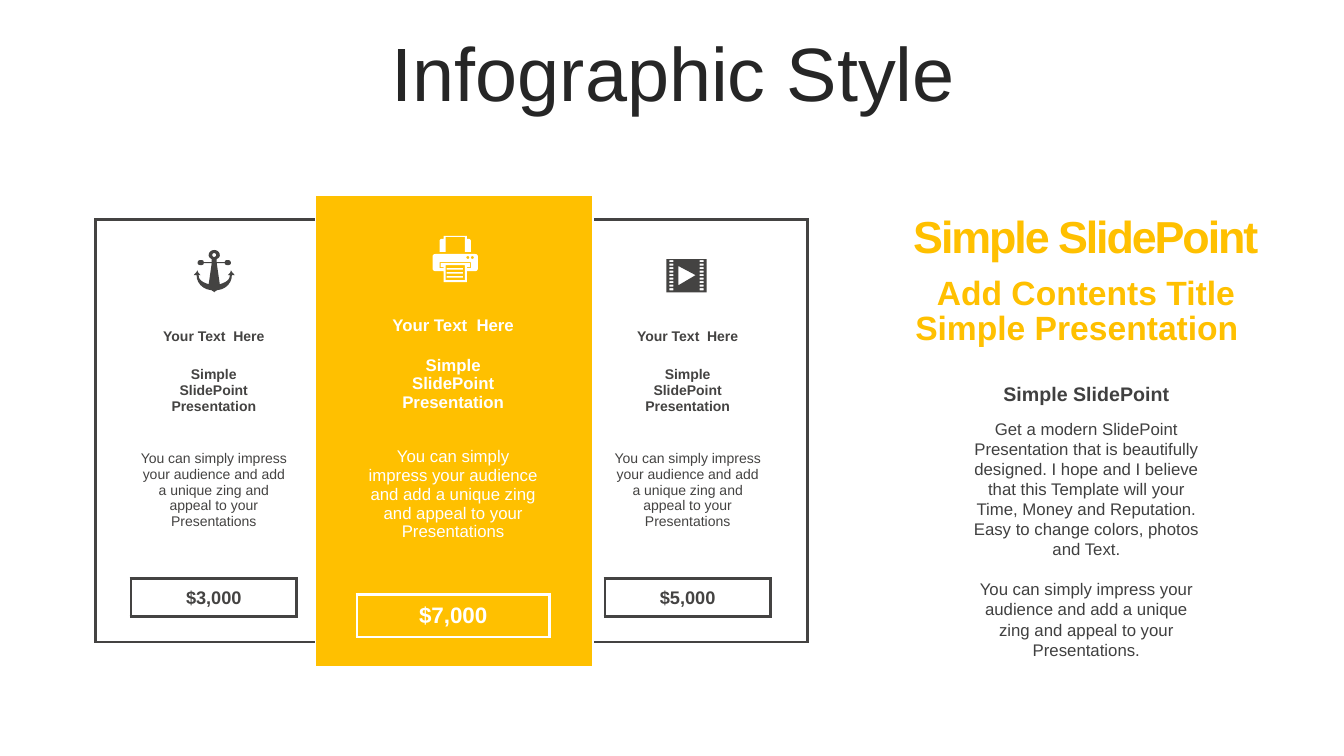
from dataclasses import dataclass
from math import cos, pi, sin

from lxml.etree import SubElement
from pptx import Presentation
from pptx.dml.color import RGBColor as Rgb
from pptx.enum.text import MSO_ANCHOR as Anchor, PP_ALIGN as Align
from pptx.oxml import parse_xml
from pptx.oxml.ns import nsdecls, qn
from pptx.util import Inches, Pt


@dataclass(frozen=True)
class Theme:
    font: str = "Arial"
    title: str = "262626"
    dark: str = "444342"
    body: str = "404040"
    gold: str = "FFC000"
    white: str = "FFFFFF"
    title_size: int = 54
    headline_size: int = 32
    subtitle_size: int = 24
    lead_size: int = 14
    body_size: int = 12


@dataclass(frozen=True)
class Plan:
    price: str
    left: float
    top: float
    columns: tuple
    rows: tuple
    fill: str
    ink: str
    frame: float
    text_size: int
    price_size: int
    side_margin: float
    edge_margin: float


THEME = Theme()
PRICE_ROW = 5
PRICE_LINE = 2.25
PITCH = "You can simply impress your audience and add a unique zing and appeal to your Presentations"
SIDE = dict(top=2.18, columns=(0.35, 1.64, 0.37),
            rows=(1, 0.33, 0.73, 1.25, 0.25, 0.38, 0.25),
            fill=THEME.white, ink=THEME.dark, frame=2.25, text_size=10,
            price_size=13, side_margin=0.08, edge_margin=0.04)
PLANS = (
    Plan("$5,000", left=5.65, **SIDE),
    Plan("$3,000", left=0.95, **SIDE),
    Plan("$7,000", left=3.13, top=1.94, columns=(0.41, 1.91, 0.43),
         rows=(1.11, 0.36, 0.8, 1.39, 0.3, 0.42, 0.3),
         fill=THEME.gold, ink=THEME.white, frame=1.5, text_size=12,
         price_size=16, side_margin=0.1, edge_margin=0.05),
)


def rectangle(left, top, right, bottom):
    return [(left, top), (right, top), (right, bottom), (left, bottom)]


def circle(x, y, radius):
    angles = [step * pi / 6 for step in range(12)]
    return [(x + radius * cos(angle), y + radius * sin(angle)) for angle in angles]


def flatten(steps):
    points = []
    for step in steps:
        if len(step) == 2:
            points.append(step)
            continue
        corners = [points[-1], step[:2], step[2:4], step[4:]]
        for part in range(1, 7):
            t = part / 6
            weights = ((1 - t) ** 3, 3 * t * (1 - t) ** 2, 3 * t * t * (1 - t), t ** 3)
            points.append(tuple(sum(w * corner[axis] for w, corner in zip(weights, corners))
                                for axis in (0, 1)))
    return points


def symmetric(center, steps):
    half = flatten(steps)
    return half + [(2 * center - x, y) for x, y in reversed(half)]


def film_icon():
    holes = [rectangle(left, 2.58 + row * 0.035, left + 0.04, 2.6 + row * 0.035)
             for row in range(9) for left in (6.64, 6.94)]
    return [rectangle(6.61, 2.57, 7.01, 2.9),
            [(6.73, 2.64), (6.73, 2.83), (6.9, 2.73)]] + holes


def anchor_icon():
    center = 2.125
    outline = symmetric(center, [
        (center, 2.48), (2.15, 2.48, 2.18, 2.5, 2.18, 2.53),
        (2.18, 2.55, 2.17, 2.56, 2.15, 2.57), (2.15, 2.6), (2.23, 2.6),
        (2.23, 2.59), (2.24, 2.58, 2.25, 2.58, 2.26, 2.58),
        (2.28, 2.58, 2.29, 2.59, 2.29, 2.61), (2.29, 2.62, 2.28, 2.63, 2.26, 2.63),
        (2.25, 2.63, 2.24, 2.63, 2.23, 2.62), (2.23, 2.61), (2.15, 2.61),
        (2.18, 2.82), (2.24, 2.8, 2.28, 2.78, 2.28, 2.73), (2.26, 2.73),
        (2.28, 2.71, 2.29, 2.7, 2.29, 2.68), (2.3, 2.7, 2.31, 2.71, 2.33, 2.73),
        (2.3, 2.73), (2.3, 2.8, 2.25, 2.87, 2.15, 2.88),
        (2.14, 2.89, 2.13, 2.89, center, 2.9)])
    return [outline, circle(center, 2.53, 0.02)]


def printer_icon():
    center = 4.515
    halves = (
        [(4.71, 2.52), (4.73, 2.52, 4.74, 2.53, 4.74, 2.55), (4.74, 2.66),
         (4.74, 2.68, 4.73, 2.69, 4.71, 2.69), (4.63, 2.69), (4.63, 2.8)],
        [(4.63, 2.34), (4.63, 2.37), (4.65, 2.37),
         (4.66, 2.37, 4.67, 2.38, 4.67, 2.39), (4.67, 2.5), (4.61, 2.5), (4.61, 2.35)],
        [(4.67, 2.6), (4.67, 2.66), (4.63, 2.66), (4.63, 2.65), (4.66, 2.65), (4.66, 2.61)],
        [(4.61, 2.63), (4.61, 2.78)],
    )
    lines = [rectangle(4.43, top, 4.59, top + 0.015) for top in (2.66, 2.7, 2.74)]
    buttons = [circle(x, 2.555, 0.015) for x in (4.64, 4.685)]
    return [symmetric(center, half) for half in halves] + lines + buttons


class SlideBuilder:
    def __init__(self, deck, theme):
        self.theme = theme
        self.slide = deck.slides.add_slide(deck.slide_layouts[5])

    def fill_text(self, frame, texts, size, color, bold=False, gap=0):
        for index, text in enumerate(texts):
            para = frame.paragraphs[0] if index == 0 else frame.add_paragraph()
            para.text = text
            para.alignment = Align.CENTER
            para.font.name = self.theme.font
            para.font.size = Pt(size)
            para.font.bold = bold
            para.font.color.rgb = Rgb.from_string(color)
            if index:
                para.space_before = Pt(gap)

    def title(self, text):
        box = self.slide.shapes.title
        box.left, box.top, box.width, box.height = map(Inches, (0.35, 0.37, 12.66, 0.79))
        frame = box.text_frame
        frame.vertical_anchor = Anchor.MIDDLE
        self.fill_text(frame, [text], self.theme.title_size, self.theme.title)
        frame.paragraphs[0].line_spacing = 0.9

    def text(self, place, texts, size, color, bold=False, gap=0, tracking=None):
        box = self.slide.shapes.add_textbox(*map(Inches, place))
        box.text_frame.word_wrap = True
        self.fill_text(box.text_frame, texts, size, color, bold, gap)
        if tracking is not None:
            for span in box.text_frame.paragraphs[0].runs:
                span._r.get_or_add_rPr().set("spc", str(int(tracking * 100)))

    def icon(self, contours, color):
        first, *others = [[(Inches(x), Inches(y)) for x, y in contour] for contour in contours]
        builder = self.slide.shapes.build_freeform(*first[0])
        builder.add_line_segments(first[1:])
        for contour in others:
            builder.move_to(*contour[0])
            builder.add_line_segments(contour[1:])
        shape = builder.convert_to_shape()
        shape.shadow.inherit = False
        shape.fill.solid()
        shape.fill.fore_color.rgb = Rgb.from_string(color)
        shape.line.fill.background()

    def borders(self, cell, color, widths):
        properties = cell._tc.get_or_add_tcPr()
        for index, side in enumerate("LRTB"):
            width = widths.get(side, 0)
            paint = f'<a:solidFill><a:srgbClr val="{color}"/></a:solidFill>' if width else "<a:noFill/>"
            properties.insert(index, parse_xml(
                f'<a:ln{side} {nsdecls("a")} w="{Pt(width)}">{paint}</a:ln{side}>'))

    def plan(self, plan):
        size = (sum(plan.columns), sum(plan.rows))
        table = self.slide.shapes.add_table(
            len(plan.rows), len(plan.columns),
            *map(Inches, (plan.left, plan.top, *size))).table
        table.first_row = table.horz_banding = False
        for column, width in zip(table.columns, plan.columns):
            column.width = Inches(width)
        for row, height in zip(table.rows, plan.rows):
            row.height = Inches(height)
        contents = {
            1: (["Your Text  Here"], plan.text_size, True),
            2: (["Simple", "SlidePoint Presentation"], plan.text_size, True),
            3: ([PITCH], plan.text_size, False),
            PRICE_ROW: ([plan.price], plan.price_size, True),
        }
        last_row, last_column = len(plan.rows) - 1, len(plan.columns) - 1
        for r in range(last_row + 1):
            for c in range(last_column + 1):
                cell = table.cell(r, c)
                cell.fill.solid()
                cell.fill.fore_color.rgb = Rgb.from_string(plan.fill)
                cell.vertical_anchor = Anchor.MIDDLE
                cell.margin_left = cell.margin_right = Inches(plan.side_margin)
                cell.margin_top = cell.margin_bottom = Inches(plan.edge_margin)
                if c == 1 and r in contents:
                    texts, points, bold = contents[r]
                    self.fill_text(cell.text_frame, texts, points, plan.ink, bold)
                else:
                    SubElement(cell.text_frame.paragraphs[0]._p, qn("a:endParaRPr"), sz="600")
                outer = {"L": c == 0, "R": c == last_column, "T": r == 0, "B": r == last_row}
                widths = {side: plan.frame for side, on in outer.items() if on}
                shared = {(0, 0): "LRTB", (0, -1): "R", (0, 1): "L", (-1, 0): "B", (1, 0): "T"}
                widths.update(dict.fromkeys(shared.get((r - PRICE_ROW, c - 1), ""), PRICE_LINE))
                self.borders(cell, plan.ink, widths)


def main():
    deck = Presentation()
    deck.slide_width, deck.slide_height = Inches(13.33), Inches(7.5)
    page = SlideBuilder(deck, THEME)
    page.title("Infographic Style")
    for plan in PLANS:
        page.plan(plan)
    page.icon(film_icon(), THEME.dark)
    page.icon(anchor_icon(), THEME.dark)
    page.icon(printer_icon(), THEME.white)
    page.text((8.65, 2.02, 4.24, 0.64), ["Simple SlidePoint"], THEME.headline_size,
              THEME.gold, bold=True, tracking=-1.5)
    page.text((8.79, 3, 3.78, 0.5), ["Simple Presentation"], THEME.subtitle_size, THEME.gold, bold=True)
    page.text((8.88, 2.65, 3.78, 0.5), ["Add Contents Title"], THEME.subtitle_size, THEME.gold, bold=True)
    page.text((9.55, 4.1, 2.45, 2.52), [
        "Get a modern SlidePoint Presentation that is beautifully designed. I hope and I believe "
        "that this Template will your Time, Money and Reputation. Easy to change colors, photos and Text.",
        PITCH + "."], THEME.body_size, THEME.body, gap=14)
    page.text((9.55, 3.74, 2.45, 0.34), ["Simple SlidePoint"], THEME.lead_size, THEME.body, bold=True)
    deck.save("out.pptx")


if __name__ == "__main__":
    main()
